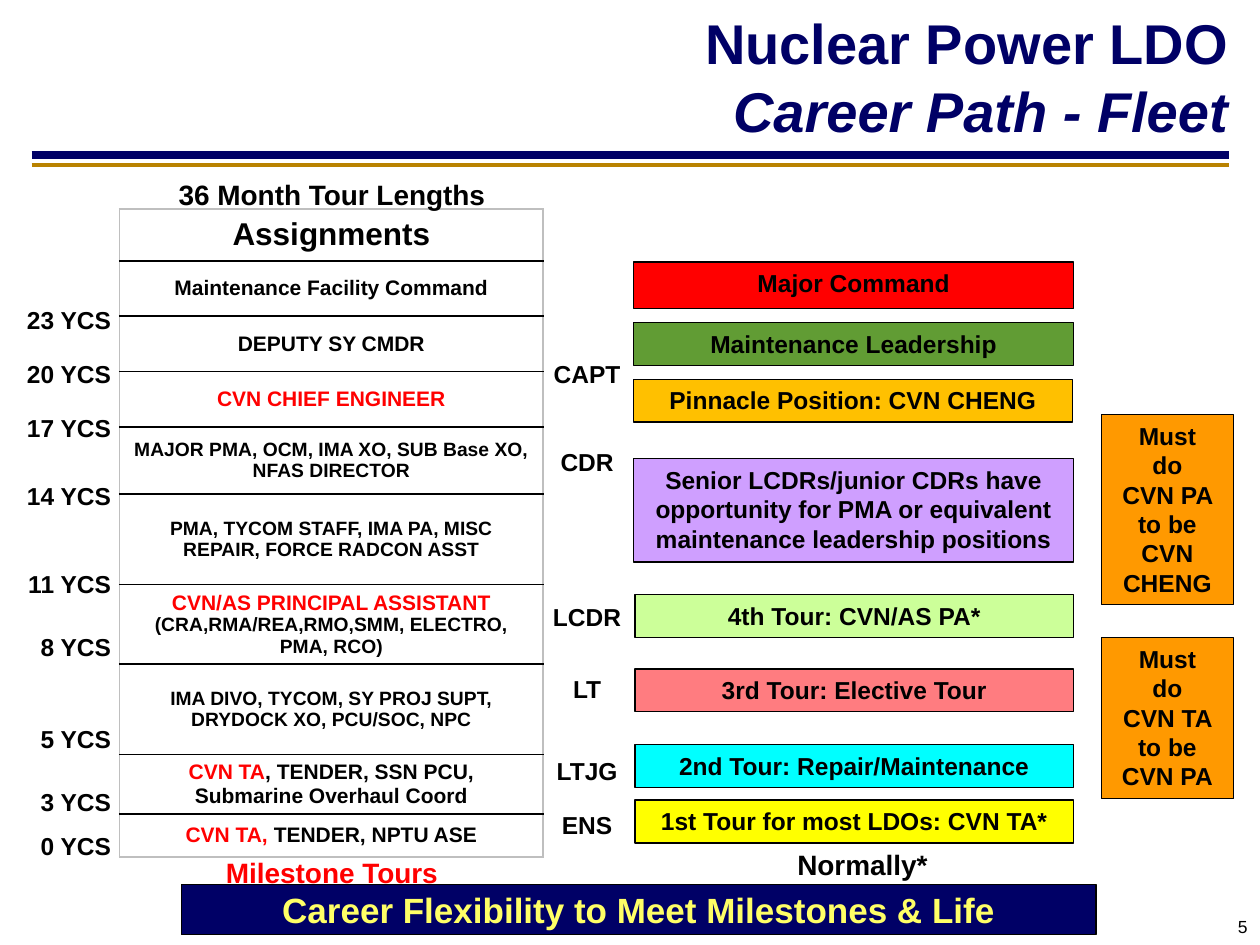
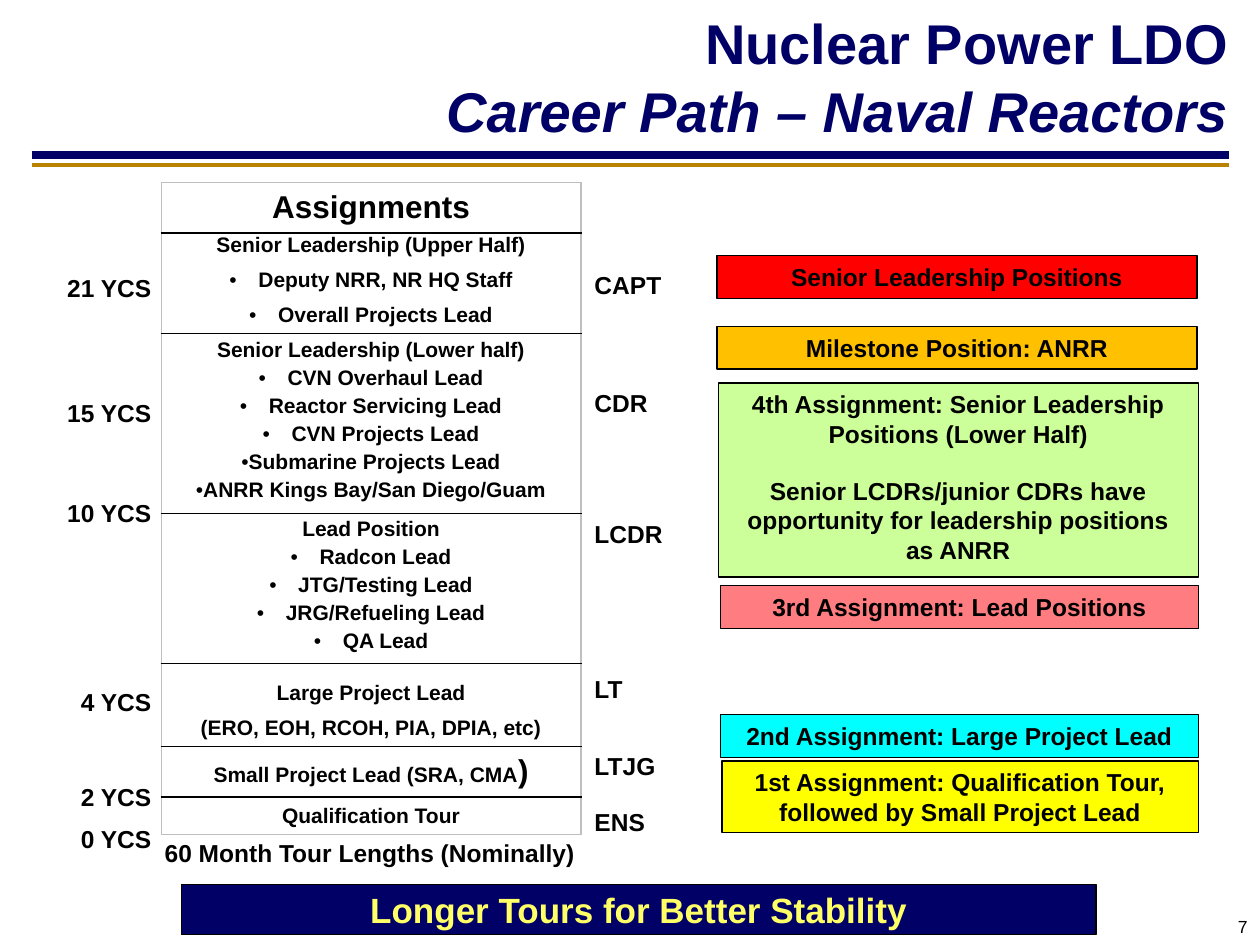
from lxml.etree import SubElement
from pptx import Presentation
from pptx.dml.color import RGBColor
from pptx.enum.shapes import MSO_CONNECTOR, MSO_SHAPE
from pptx.enum.text import MSO_ANCHOR as ANCHOR, PP_ALIGN as ALIGN
from pptx.oxml.ns import qn
from pptx.util import Pt

PX = 9144
FONT = "Arial"
COLORS = {
    "navy": "000066", "gold": "B98200", "black": "000000", "white": "FFFFFF",
    "grey": "BFBFBF", "red": "FF0000", "green": "619C34", "amber": "FFC000",
    "lilac": "CF9FFF", "lime": "CCFF99", "pink": "FF7C80", "cyan": "00FFFF",
    "yellow": "FFFF00", "orange": "FF9900", "cream": "FFFF66",
}
RGB = {name: RGBColor.from_string(code) for name, code in COLORS.items()}
RED = {"color": "red"}


def write(tf, paras, size=14, color="black", bold=True, align=ALIGN.CENTER,
          leading=None, gap=0, anchor=ANCHOR.TOP, wrap=True):
    tf.word_wrap = wrap
    tf.vertical_anchor = anchor
    for i, para in enumerate(paras):
        p = tf.paragraphs[0] if i == 0 else tf.add_paragraph()
        p.alignment = align
        if leading:
            p.line_spacing = Pt(leading)
        p.space_before = Pt(gap if i else 0)
        runs = [(para, {})] if isinstance(para, str) else para
        if runs[0][0].startswith("•"):
            hang = 23 * PX if runs[0][0].startswith("• ") else 0
            pPr = p._p.get_or_add_pPr()
            pPr.set("marL", str(hang))
            pPr.set("indent", str(-hang))
            SubElement(pPr, qn("a:buFont")).set("typeface", FONT)
            SubElement(pPr, qn("a:buChar")).set("char", "•")
            runs = [(runs[0][0].lstrip("• "), {})]
        for text, fmt in runs:
            if text == "\n":
                p.add_line_break()
                continue
            r = p.add_run()
            r.text = text
            r.font.name = FONT
            r.font.size = Pt(fmt.get("size", size))
            r.font.bold = bold
            r.font.italic = fmt.get("italic", False)
            r.font.color.rgb = RGB[fmt.get("color", color)]


slides = [
    {
        "subtitle": "Career Path - Fleet",
        "number": "5",
        "banner": "Career Flexibility to Meet Milestones & Life",
        "table": (95, 166, 336),
        "rows": [
            (41, ["Assignments"], {"size": 18}),
            (44, ["Maintenance Facility Command"], {}),
            (44, ["DEPUTY SY CMDR"], {}),
            (44, [[("CVN CHIEF ENGINEER", RED)]], {}),
            (53, ["MAJOR PMA, OCM, IMA XO, SUB Base XO,", "NFAS DIRECTOR"], {"size": 11}),
            (72, ["PMA, TYCOM STAFF, IMA PA, MISC REPAIR, FORCE RADCON ASST"], {"size": 11}),
            (63, [[("CVN/AS PRINCIPAL ASSISTANT", {"color": "red", "size": 12})],
                  "(CRA,RMA/REA,RMO,SMM, ELECTRO, PMA, RCO)"], {"size": 11}),
            (72, ["IMA DIVO, TYCOM, SY PROJ SUPT, DRYDOCK XO, PCU/SOC, NPC"], {"size": 11}),
            (47, [[("CVN TA", RED), (", TENDER, SSN PCU, Submarine Overhaul Coord", {})]], {}),
            (34, [[("CVN TA,", RED), (" TENDER, NPTU ASE", {})]], {}),
        ],
        "years": (10, [("23", 237), ("20", 280), ("17", 323), ("14", 377), ("11", 447),
                       ("8", 497), ("5", 570), ("3", 620), ("0", 655)]),
        "ranks": (426, ALIGN.CENTER, [("CAPT", 280), ("CDR", 350), ("LCDR", 473),
                                      ("LT", 530), ("LTJG", 595), ("ENS", 638)]),
        "boxes": [
            (503, 208, 349, 37, "red", ["Major Command"]),
            (503, 256, 349, 34, "green", ["Maintenance Leadership"]),
            (503, 301, 348, 34, "amber", ["Pinnacle Position: CVN CHENG"]),
            (503, 364, 349, 82, "lilac", ["Senior LCDRs/junior CDRs have opportunity for PMA "
                                          "or equivalent maintenance leadership positions"]),
            (504, 472, 348, 34, "lime", ["4th Tour: CVN/AS PA*"]),
            (504, 531, 348, 34, "pink", ["3rd Tour: Elective Tour"]),
            (504, 591, 348, 34, "cyan", ["2nd Tour: Repair/Maintenance"]),
            (504, 635, 348, 34, "yellow", ["1st Tour for most LDOs: CVN TA*"]),
            (874, 329, 105, 151, "orange", ["Must", "do", "CVN PA to be CVN CHENG"]),
            (874, 506, 105, 128, "orange", ["Must", "do", "CVN TA to be CVN PA"]),
        ],
        "notes": [
            (128, 136, 271, "36 Month Tour Lengths", {"size": 16}),
            (168, 674, 191, "Milestone Tours", {"size": 16, "color": "red", "wrap": False}),
            (622, 668, 125, "Normally*", {"size": 16, "wrap": False}),
        ],
    },
    {
        "subtitle": "Career Path – Naval Reactors",
        "number": "7",
        "banner": "Longer Tours for Better Stability",
        "table": (128, 145, 333),
        "rows": [
            (40, ["Assignments"], {"size": 18}),
            (79, ["Senior Leadership (Upper Half)", "• Deputy NRR, NR HQ Staff",
                  "• Overall Projects Lead"], {"leading": 10, "gap": 10}),
            (143, ["Senior Leadership (Lower half)", "• CVN Overhaul Lead",
                   "• Reactor Servicing Lead", "• CVN Projects Lead",
                   "•Submarine Projects Lead", "•ANRR Kings Bay/San Diego/Guam"],
             {"leading": 10, "gap": 6}),
            (119, ["Lead Position", "• Radcon Lead", "• JTG/Testing Lead",
                   "• JRG/Refueling Lead", "• QA Lead"], {"leading": 10, "gap": 6}),
            (66, ["Large Project Lead", "(ERO, EOH, RCOH, PIA, DPIA, etc)"],
             {"leading": 10, "gap": 10, "top": 19}),
            (40, [[("Small Project Lead (SRA, CMA", {}), (")", {"size": 18})]], {}),
            (30, ["Qualification Tour"], {}),
        ],
        "years": (42, [("21", 212), ("15", 311), ("10", 390), ("4", 540), ("2", 616), ("0", 649)]),
        "ranks": (462, ALIGN.LEFT, [("CAPT", 209), ("CDR", 303), ("LCDR", 407),
                                    ("LT", 530), ("LTJG", 591), ("ENS", 636)]),
        "boxes": [
            (569, 203, 381, 34, "red", ["Senior Leadership Positions"]),
            (569, 259, 381, 34, "amber", ["Milestone Position: ANRR"]),
            (570, 304, 381, 154, "lime", ["4th Assignment: Senior Leadership Positions (Lower Half)",
                                          "Senior LCDRs/junior CDRs have opportunity for "
                                          "leadership positions as ANRR"]),
            (572, 465, 379, 34, "pink", ["3rd Assignment: Lead Positions"]),
            (572, 567, 379, 34, "cyan", ["2nd Assignment: Large Project Lead"]),
            (573, 604, 378, 57, "yellow", ["1st Assignment: Qualification Tour, "
                                           "followed by Small Project Lead"]),
        ],
        "notes": [(114, 660, 359, "60 Month Tour Lengths (Nominally)", {})],
    },
]

prs = Presentation()
prs.slide_width, prs.slide_height = 1000 * PX, 750 * PX

for data in slides:
    s = prs.slides.add_slide(prs.slide_layouts[5])
    title = s.shapes.title
    title.left, title.top, title.width, title.height = 149 * PX, -2 * PX, 836 * PX, 125 * PX
    write(title.text_frame, [[("Nuclear Power LDO", {}), ("\n", {}),
                              (data["subtitle"], {"italic": True})]],
          size=32, color="navy", align=ALIGN.RIGHT, anchor=ANCHOR.MIDDLE)

    for y, color, weight in [(123, "navy", 4.5), (131, "gold", 2.75)]:
        line = s.shapes.add_connector(MSO_CONNECTOR.STRAIGHT, 25 * PX, y * PX, 975 * PX, y * PX)
        line.line.color.rgb = RGB[color]
        line.line.width = Pt(weight)
        SubElement(line._element.spPr, qn("a:effectLst"))

    rows = data["rows"]
    x, y, w = data["table"]
    height = sum(row[0] for row in rows)
    frame = s.shapes.add_table(len(rows), 1, x * PX, y * PX, w * PX, height * PX)
    table = frame.table
    table.first_row = table.horz_banding = False
    table.columns[0].width = w * PX
    for i, (h, paras, fmt) in enumerate(rows):
        table.rows[i].height = h * PX
        cell = table.cell(i, 0)
        fmt = {"size": 12, **fmt}
        cell.margin_top = fmt.pop("top", 5) * PX
        cell.margin_bottom = 5 * PX
        cell.margin_left = cell.margin_right = 10 * PX
        cell.vertical_anchor = ANCHOR.MIDDLE
        write(cell.text_frame, paras, anchor=None, wrap=None, **fmt)
        tcPr = cell._tc.get_or_add_tcPr()
        edges = {"lnL": "grey", "lnR": "grey", "lnT": "black" if i else "grey",
                 "lnB": "black" if i < len(rows) - 1 else "grey"}
        for edge, color in edges.items():
            ln = SubElement(tcPr, qn("a:" + edge), w=str(Pt(1)))
            SubElement(SubElement(ln, qn("a:solidFill")), qn("a:srgbClr"), val=COLORS[color])
        cell.fill.solid()
        cell.fill.fore_color.rgb = RGB["white"]

    years_x, years = data["years"]
    ranks_x, ranks_align, ranks = data["ranks"]
    labels = [(years_x, y, 88, year + " YCS", {"align": ALIGN.RIGHT}) for year, y in years]
    labels += [(ranks_x, y, 80, rank, {"align": ranks_align}) for rank, y in ranks]
    labels += data["notes"]
    labels.append((927, 722, 73, data["number"], {"size": 10, "bold": False, "align": ALIGN.RIGHT}))
    for x, y, w, text, fmt in labels:
        sp = s.shapes.add_textbox(x * PX, y * PX, w * PX, (28 if y == 722 else 34) * PX)
        write(sp.text_frame, [text], **fmt)

    banner = (144, 702, 726, 40, "navy", [data["banner"]])
    for x, y, w, h, fill, paras in data["boxes"] + [banner]:
        sp = s.shapes.add_shape(MSO_SHAPE.RECTANGLE, x * PX, y * PX, w * PX, h * PX)
        sp.shadow.inherit = False
        sp.fill.solid()
        sp.fill.fore_color.rgb = RGB[fill]
        sp.line.color.rgb = RGB["black"]
        sp.line.width = Pt(0.75)
        if fill == "navy":
            write(sp.text_frame, paras, size=20, color="cream", anchor=ANCHOR.MIDDLE)
        else:
            write(sp.text_frame, paras, gap=16 if fill == "lime" else 0)

prs.save("out.pptx")
